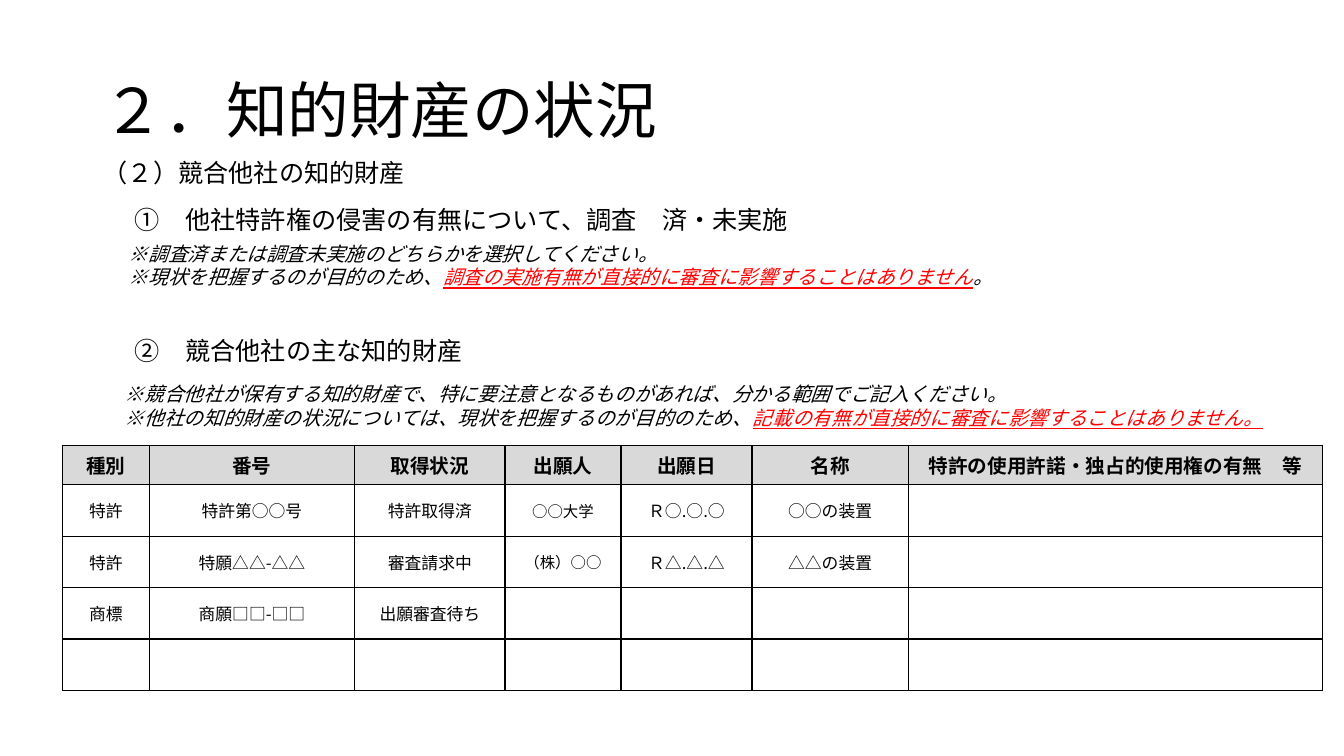
from dataclasses import dataclass

from lxml import etree
from pptx import Presentation
from pptx.dml.color import RGBColor
from pptx.enum.text import MSO_ANCHOR, MSO_AUTO_SIZE, PP_ALIGN
from pptx.oxml.ns import qn
from pptx.util import Inches, Pt

LEFT, CENTER = PP_ALIGN.LEFT, PP_ALIGN.CENTER
MIDDLE = MSO_ANCHOR.MIDDLE
NO_AUTOFIT = MSO_AUTO_SIZE.NONE
TITLE_ONLY_LAYOUT = 5
SLIDE_WIDTH, SLIDE_HEIGHT = Inches(13.333), Inches(7.5)


@dataclass(frozen=True)
class Theme:
    font: str = "Noto Sans CJK JP"
    ink: str = "000000"
    accent: str = "FF0000"
    header_fill: str = "D9D9D9"
    title_size: int = 44
    heading_size: int = 18
    note_size: int = 14
    cell_size: int = 12
    applicant_size: int = 11
    border_width: int = 1


THEME = Theme()

# Places and sizes are percentages of the slide's width and height.
TITLE_BOX = (6.9, 5.33, 86.25, 19.33)
HEADINGS = [
    ("（２）競合他社の知的財産", (6.9, 20.13, 86.25, 5.33)),
    ("①　他社特許権の侵害の有無について、調査　済・未実施", (9.3, 26.4, 86.25, 5.33)),
    ("②　競合他社の主な知的財産", (9.3, 43.73, 86.25, 5.33)),
]

# Each note line is a list of (text, emphasized) pieces.
SURVEY_NOTE = [
    [("※調査済または調査未実施のどちらかを選択してください。", False)],
    [("※現状を把握するのが目的のため、", False),
     ("調査の実施有無が直接的に審査に影響することはありません", True),
     ("。", False)],
]
COMPETITOR_NOTE = [
    [("※競合他社が保有する知的財産で、特に要注意となるものがあれば、分かる範囲でご記入ください。", False)],
    [("※他社の知的財産の状況については、現状を把握するのが目的のため、", False),
     ("記載の有無が直接的に審査に影響することはありません。", True)],
]

TABLE_CORNER = (4.65, 58.93)
COLUMN_WIDTHS = [6.45, 15.3, 11.18, 8.63, 9.75, 11.63, 30.83]
HEADER_HEIGHT, ROW_HEIGHT = 5.2, 6.8
APPLICANT_COLUMN = 3
TABLE_ROWS = [
    ["種別", "番号", "取得状況", "出願人", "出願日", "名称", "特許の使用許諾・独占的使用権の有無　等"],
    ["特許", "特許第○○号", "特許取得済", "○○大学", "Ｒ○.○.○", "○○の装置", ""],
    ["特許", "特願△△-△△", "審査請求中", "（株）○○", "Ｒ△.△.△", "△△の装置", ""],
    ["商標", "商願□□-□□", "出願審査待ち", "", "", "", ""],
    [""] * len(COLUMN_WIDTHS),
]


def across(percent):
    return round(SLIDE_WIDTH * percent / 100)


def down(percent):
    return round(SLIDE_HEIGHT * percent / 100)


def to_lengths(box):
    left, top, width, height = box
    return across(left), down(top), across(width), down(height)


def format_run(run, size, color=THEME.ink, bold=False, italic=False, underline=False):
    """Format a run, naming the font for Latin and East Asian characters alike."""
    font = run.font
    font.name, font.size = THEME.font, Pt(size)
    font.bold, font.italic, font.underline = bold, italic, underline
    font.color.rgb = RGBColor.from_string(color)
    latin = run._r.rPr.find(qn("a:latin"))
    east_asian = etree.Element(qn("a:ea"), typeface=THEME.font)
    latin.addnext(east_asian)


def add_title(slide, text):
    title = slide.shapes.title
    title.left, title.top, title.width, title.height = to_lengths(TITLE_BOX)
    frame = title.text_frame
    frame.text = text
    frame.auto_size = NO_AUTOFIT
    frame.vertical_anchor = MIDDLE
    paragraph = frame.paragraphs[0]
    paragraph.alignment, paragraph.line_spacing = LEFT, 0.9
    format_run(paragraph.runs[0], THEME.title_size)


def add_text_frame(slide, box):
    frame = slide.shapes.add_textbox(*to_lengths(box)).text_frame
    frame.word_wrap = True
    return frame


def add_heading(slide, text, box):
    frame = add_text_frame(slide, box)
    frame.text = text
    format_run(frame.paragraphs[0].runs[0], THEME.heading_size)


def add_note(slide, lines, box):
    frame = add_text_frame(slide, box)
    frame.text = "\n".join("" for _ in lines)
    for paragraph, pieces in zip(frame.paragraphs, lines):
        for text, emphasized in pieces:
            run = paragraph.add_run()
            run.text = text
            format_run(run, THEME.note_size, THEME.accent if emphasized else THEME.ink,
                       italic=True, underline=emphasized)


def add_borders(cell):
    properties = cell._tc.get_or_add_tcPr()
    for side in ("lnL", "lnR", "lnT", "lnB"):
        line = etree.SubElement(properties, qn(f"a:{side}"), w=str(Pt(THEME.border_width)))
        fill = etree.SubElement(line, qn("a:solidFill"))
        etree.SubElement(fill, qn("a:srgbClr"), val=THEME.ink)


def fill_cell(cell, text, size, is_header):
    add_borders(cell)
    if is_header:
        cell.fill.solid()
        cell.fill.fore_color.rgb = RGBColor.from_string(THEME.header_fill)
    else:
        cell.fill.background()
    cell.vertical_anchor = MIDDLE
    cell.text_frame.text = text
    paragraph = cell.text_frame.paragraphs[0]
    paragraph.alignment = CENTER
    for run in paragraph.runs:
        format_run(run, size, bold=is_header)


def add_property_table(slide):
    row_heights = [HEADER_HEIGHT] + [ROW_HEIGHT] * (len(TABLE_ROWS) - 1)
    box = (*TABLE_CORNER, sum(COLUMN_WIDTHS), sum(row_heights))
    table = slide.shapes.add_table(
        len(TABLE_ROWS), len(COLUMN_WIDTHS), *to_lengths(box)).table
    table.horz_banding = False
    for column, width in zip(table.columns, COLUMN_WIDTHS):
        column.width = across(width)
    for row, height in zip(table.rows, row_heights):
        row.height = down(height)
    for row_index, texts in enumerate(TABLE_ROWS):
        is_header = row_index == 0
        for column_index, text in enumerate(texts):
            if is_header:
                size = THEME.note_size
            elif column_index == APPLICANT_COLUMN:
                size = THEME.applicant_size
            else:
                size = THEME.cell_size
            fill_cell(table.cell(row_index, column_index), text, size, is_header)


def main():
    presentation = Presentation()
    presentation.slide_width, presentation.slide_height = SLIDE_WIDTH, SLIDE_HEIGHT
    slide = presentation.slides.add_slide(presentation.slide_layouts[TITLE_ONLY_LAYOUT])
    add_title(slide, "２．知的財産の状況")
    add_note(slide, COMPETITOR_NOTE, (8.55, 49.87, 87, 7.6))
    add_property_table(slide)
    for text, box in HEADINGS:
        add_heading(slide, text, box)
    add_note(slide, SURVEY_NOTE, (8.85, 31.33, 66.98, 7.6))
    presentation.save("out.pptx")


if __name__ == "__main__":
    main()
